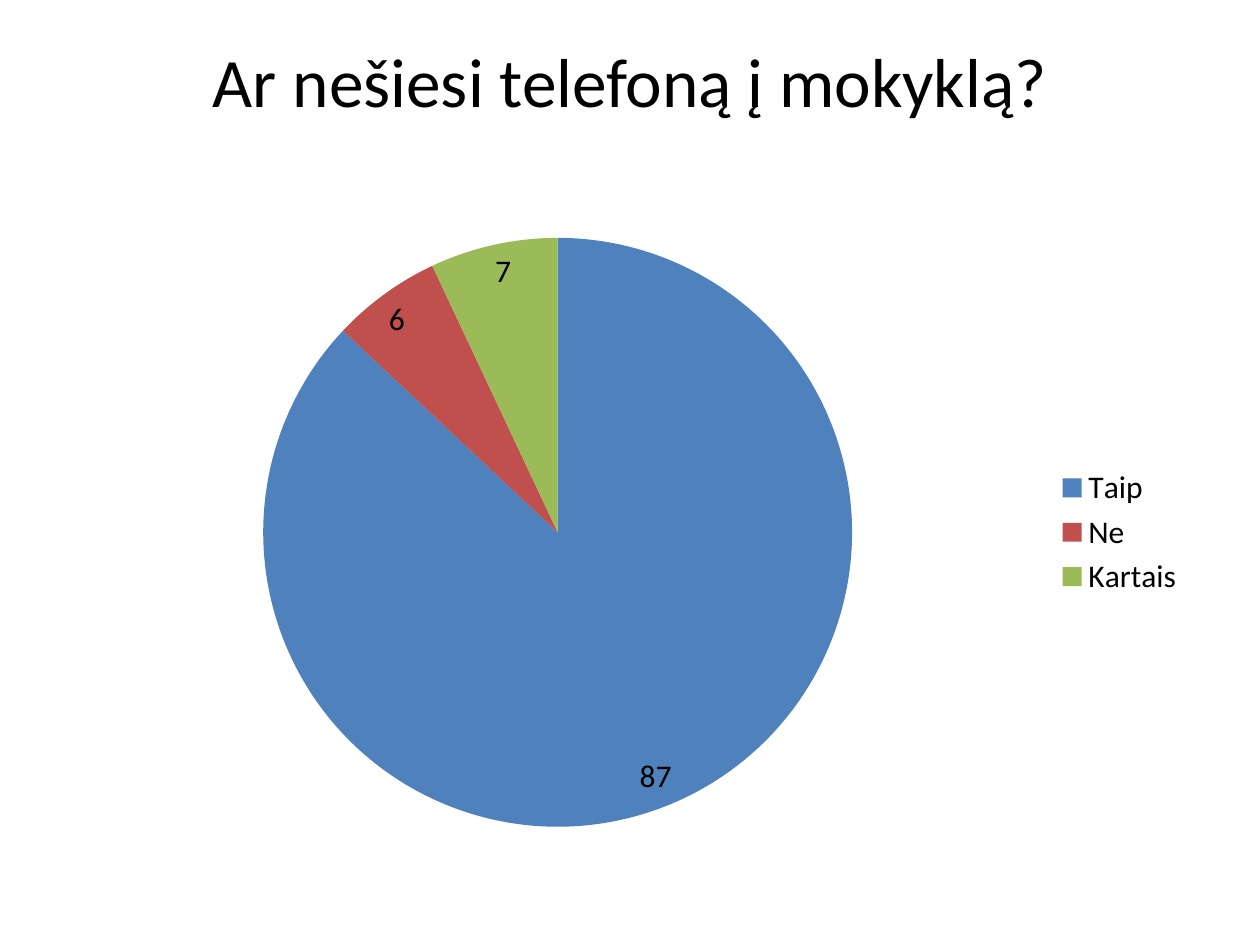
from dataclasses import dataclass

from pptx import Presentation
from pptx import util as u
from pptx.chart.data import CategoryChartData
from pptx.dml.color import RGBColor
from pptx.enum import chart as ch
from pptx.enum import text


@dataclass(frozen=True)
class Theme:
    font: str = "Calibri"
    ink: str = "000000"
    background: str = "FFFFFF"
    answers: tuple = ("4F81BD", "C0504D", "9BBB59")
    title_size: float = 39.6
    chart_size: float = 18


THEME = Theme()
WIDTH, HEIGHT = u.Inches(10), u.Inches(7.5)
QUESTION = "Ar nešiesi telefoną į mokyklą?"
ANSWERS = {"Taip": 87, "Ne": 6, "Kartais": 7}
QUESTION_BOX = (0.05, 0.04, 0.9, 1 / 6)
ANSWERS_BOX = (0.05, 7 / 30, 0.9, 0.66)


def apply(target, **values):
    for key, value in values.items():
        setattr(target, key, value)


def place(box):
    return [int(share * side) for share, side in zip(box, (WIDTH, HEIGHT) * 2)]


def style_font(font, size):
    apply(font, name=THEME.font, size=u.Pt(size), bold=False)
    font.color.rgb = RGBColor.from_string(THEME.ink)


def fill_with(fill, colour):
    fill.solid()
    fill.fore_color.rgb = RGBColor.from_string(colour)


def question_title(slide, box):
    question = slide.shapes.title
    apply(question, **dict(zip(("left", "top", "width", "height"), place(box))))
    frame = question.text_frame
    frame.text = QUESTION
    apply(frame, word_wrap=True, auto_size=text.MSO_AUTO_SIZE.NONE,
          vertical_anchor=text.MSO_ANCHOR.TOP, margin_top=0)
    frame.paragraphs[0].alignment = text.PP_ALIGN.CENTER
    style_font(frame.paragraphs[0].runs[0].font, THEME.title_size)


def answers_pie(slide, box):
    data = CategoryChartData()
    data.categories = list(ANSWERS)
    data.add_series("Series 1", list(ANSWERS.values()))
    pie = slide.shapes.add_chart(ch.XL_CHART_TYPE.PIE, *place(box), data).chart
    apply(pie, has_title=False, has_legend=True)
    style_font(pie.font, THEME.chart_size)
    apply(pie.legend, position=ch.XL_LEGEND_POSITION.RIGHT, include_in_layout=False)

    plot = pie.plots[0]
    apply(plot, vary_by_categories=True, has_data_labels=True)
    apply(plot.data_labels, show_value=True, show_percentage=False,
          position=ch.XL_LABEL_POSITION.INSIDE_END)
    style_font(plot.data_labels.font, THEME.chart_size)
    for index, colour in enumerate(THEME.answers):
        fill_with(plot.series[0].points[index].format.fill, colour)


def main():
    deck = Presentation()
    apply(deck, slide_width=WIDTH, slide_height=HEIGHT)
    slide = deck.slides.add_slide(deck.slide_layouts.get_by_name("Title Only"))
    fill_with(slide.background.fill, THEME.background)
    question_title(slide, QUESTION_BOX)
    answers_pie(slide, ANSWERS_BOX)
    deck.save("out.pptx")


if __name__ == "__main__":
    main()
